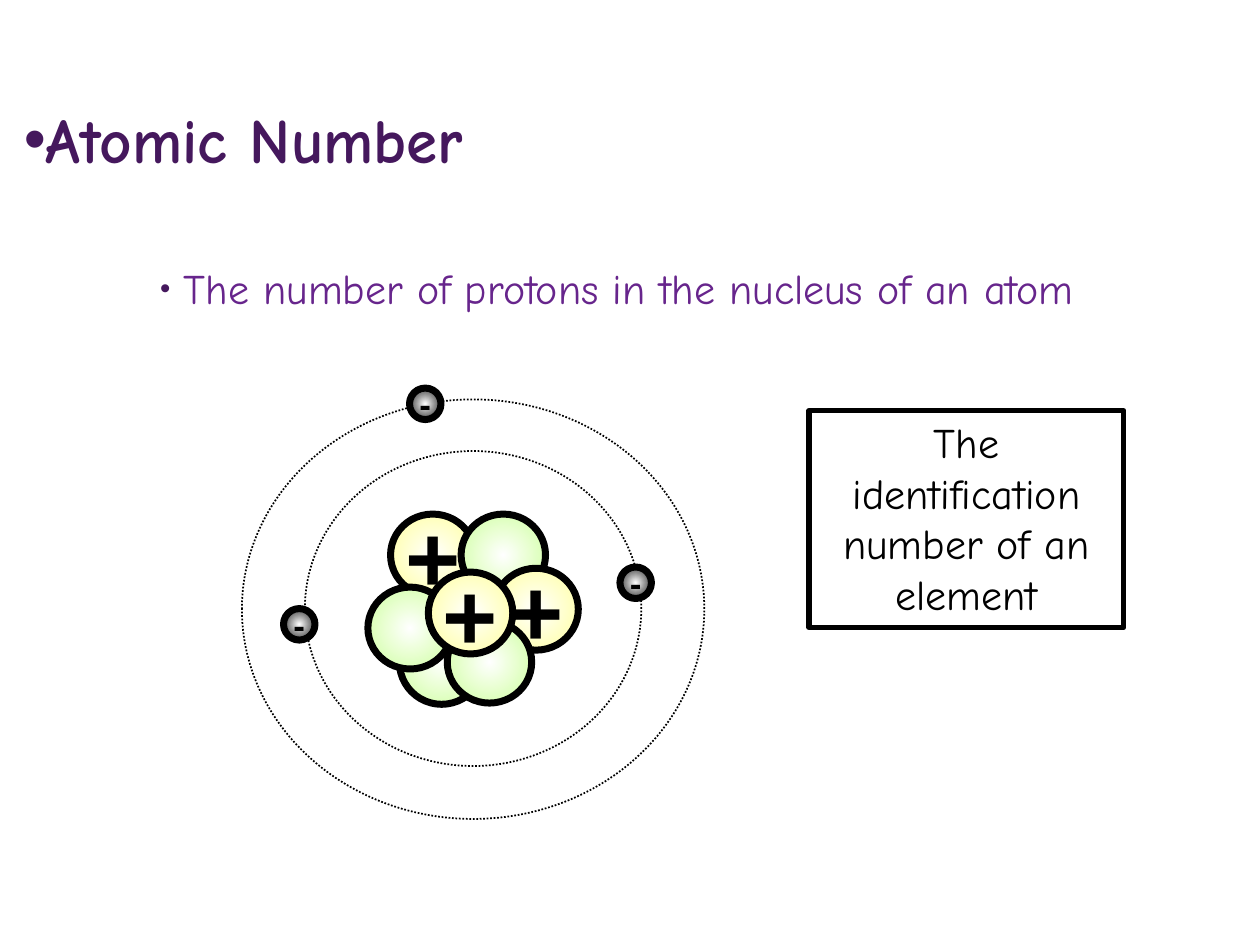
"""Build a slide that explains the atomic number with a model of an atom."""
from lxml.etree import SubElement
from pptx import Presentation
from pptx.dml.color import RGBColor
from pptx.enum.dml import MSO_LINE
from pptx.enum.shapes import MSO_SHAPE
from pptx.enum.text import MSO_ANCHOR, MSO_AUTO_SIZE, PP_ALIGN
from pptx.oxml.ns import qn
from pptx.util import Inches, Pt


def color(value):
    return RGBColor.from_string(value)


def add_particle(shapes, left, top, width, height, edge, sign, size):
    particle = shapes.add_shape(MSO_SHAPE.OVAL, Inches(left), Inches(top), Inches(width), Inches(height))
    particle.shadow.inherit = False
    particle.fill.gradient()
    for stop, value in zip(particle.fill.gradient_stops, ("FFFFFF", edge)):
        stop.color.rgb = color(value)
    gradient = particle._element.spPr.find(qn("a:gradFill"))
    gradient.remove(gradient.find(qn("a:lin")))
    radial = SubElement(gradient, qn("a:path"), path="circle")
    SubElement(radial, qn("a:fillToRect"), l="50000", t="50000", r="50000", b="50000")
    particle.line.color.rgb = color("000000")
    particle.line.width = Pt(4)
    if sign:
        frame = particle.text_frame
        frame.text = sign
        frame.word_wrap = False
        frame.vertical_anchor = MSO_ANCHOR.MIDDLE
        paragraph = frame.paragraphs[0]
        paragraph.alignment = PP_ALIGN.CENTER
        font = paragraph.runs[0].font
        font.name, font.size, font.bold = "Arial", Pt(size), True
        font.color.rgb = color("000000")


deck = Presentation()
deck.slide_width, deck.slide_height = Inches(10), Inches(7.5)
page = deck.slides.add_slide(deck.slide_layouts[1])
title, body = page.shapes.title, page.placeholders[1]

bulleted = [
    (title, (0.09, 0.75, 9, 0.7), "Atomic Number", 36, True, "45185D", 0, 100),
    (body, (1.17, 2.08, 8.33, 0.58), "The number of protons in the nucleus of an atom",
     24, False, "67258C", 0.19, 70),
]
for box, place, text, size, bold, text_color, indent, bullet_size in bulleted:
    box.left, box.top, box.width, box.height = [Inches(length) for length in place]
    frame = box.text_frame
    frame.text = text
    frame.word_wrap = True
    frame.auto_size = MSO_AUTO_SIZE.NONE
    paragraph = frame.paragraphs[0]
    paragraph.alignment = PP_ALIGN.LEFT
    paragraph.space_before = Pt(0)
    properties = paragraph._p.get_or_add_pPr()
    properties.set("marL", str(Inches(indent)))
    properties.set("indent", str(-Inches(indent)))
    bullet_color = SubElement(properties, qn("a:buClr"))
    SubElement(bullet_color, qn("a:srgbClr"), val="45185D")
    SubElement(properties, qn("a:buSzPct"), val=str(bullet_size * 1000))
    SubElement(properties, qn("a:buFont"), typeface="Arial")
    SubElement(properties, qn("a:buChar"), char="•")
    font = paragraph.runs[0].font
    font.name, font.size, font.bold = "Comic Neue", Pt(size), bold
    font.color.rgb = color(text_color)
title.text_frame.vertical_anchor = MSO_ANCHOR.MIDDLE
body.text_frame.vertical_anchor = MSO_ANCHOR.TOP
body.text_frame.paragraphs[0].line_spacing = 0.9

proton, neutron = ("FFFF99", "+", 54), ("CCFF99", "", 54)
add_particle(page.shapes, 3.17, 4.92, 0.67, 0.67, *neutron)
nucleus = page.shapes.add_group_shape()
for left, top, kind in [
    (3.1, 4.08, proton), (3.66, 4.08, neutron), (3.92, 4.51, proton),
    (2.92, 4.66, neutron), (3.55, 4.93, neutron), (3.4, 4.54, proton),
]:
    add_particle(nucleus.shapes, left, top, 0.67, 0.65, *kind)

for left, top, width, height in [(2.42, 3.58, 2.67, 2.5), (1.92, 3.17, 3.67, 3.33)]:
    orbit = page.shapes.add_shape(MSO_SHAPE.OVAL, Inches(left), Inches(top), Inches(width), Inches(height))
    orbit.shadow.inherit = False
    orbit.fill.background()
    orbit.line.color.rgb = color("000000")
    orbit.line.width = Pt(1)
    orbit.line.dash_style = MSO_LINE.ROUND_DOT

for left, top in [(4.92, 4.5), (2.25, 4.83), (3.25, 3.08)]:
    add_particle(page.shapes, left, top, 0.25, 0.25, "000000", "-", 20)

note = page.shapes.add_shape(MSO_SHAPE.RECTANGLE, Inches(6.42), Inches(3.26), Inches(2.5), Inches(1.72))
note.shadow.inherit = False
note.fill.solid()
note.fill.fore_color.rgb = color("FFFFFF")
note.line.color.rgb = color("000000")
note.line.width = Pt(3)
frame = note.text_frame
frame.text = "The identification number of an element"
frame.word_wrap = True
frame.auto_size = MSO_AUTO_SIZE.SHAPE_TO_FIT_TEXT
frame.vertical_anchor = MSO_ANCHOR.TOP
paragraph = frame.paragraphs[0]
paragraph.alignment = PP_ALIGN.CENTER
font = paragraph.runs[0].font
font.name, font.size = "Comic Neue", Pt(24)
font.color.rgb = color("000000")

deck.save("out.pptx")
